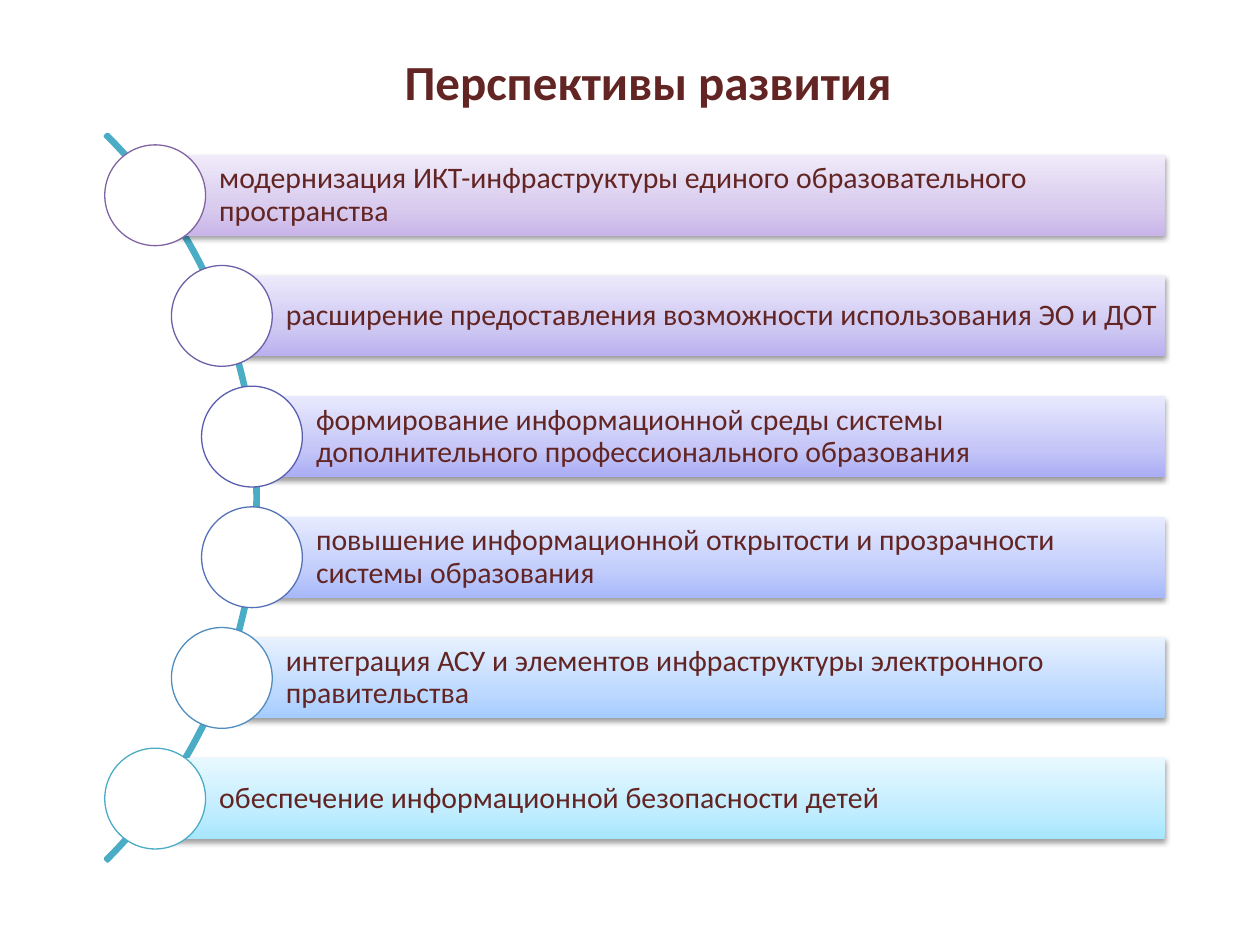
import copy

import pptx
import pptx.dml.color
import pptx.enum.shapes
import pptx.enum.text
import pptx.oxml
import pptx.oxml.ns
import pptx.util

Pt = pptx.util.Pt
RGBColor = pptx.dml.color.RGBColor
MSO_SHAPE = pptx.enum.shapes.MSO_SHAPE
ANCHOR = pptx.enum.text.MSO_ANCHOR
qn = pptx.oxml.ns.qn

MAROON = RGBColor(0x63, 0x25, 0x23)
TEAL = RGBColor(0x4B, 0xAC, 0xC6)
WHITE = RGBColor(0xFF, 0xFF, 0xFF)
# Each step: left edge, circle outline, bar colours from bottom to top, text
STEPS = [
    (88.7, RGBColor(0x80, 0x64, 0xA2),
     (RGBColor(0xC9, 0xB5, 0xE8), RGBColor(0xD8, 0xCB, 0xEE), RGBColor(0xF0, 0xEA, 0xF9)),
     "модернизация ИКТ-инфраструктуры единого образовательного пространства"),
    (126.8, RGBColor(0x6E, 0x5F, 0xA9),
     (RGBColor(0xBA, 0xB0, 0xEF), RGBColor(0xCE, 0xC8, 0xF2), RGBColor(0xEC, 0xE9, 0xFB)),
     "расширение предоставления возможности использования ЭО и ДОТ"),
    (144, RGBColor(0x5A, 0x5E, 0xB1),
     (RGBColor(0xAB, 0xAD, 0xF5), RGBColor(0xC5, 0xC6, 0xF7), RGBColor(0xE8, 0xE8, 0xFD)),
     "формирование информационной среды системы дополнительного профессионального образования"),
    (144, RGBColor(0x55, 0x72, 0xB8),
     (RGBColor(0xA7, 0xB9, 0xFB), RGBColor(0xC2, 0xCD, 0xFB), RGBColor(0xE6, 0xEB, 0xFF)),
     "повышение информационной открытости и прозрачности системы образования"),
    (126.8, RGBColor(0x50, 0x8C, 0xBF),
     (RGBColor(0xA5, 0xCC, 0xFF), RGBColor(0xBF, 0xDA, 0xFF), RGBColor(0xE7, 0xF1, 0xFF)),
     "интеграция АСУ и элементов инфраструктуры электронного правительства"),
    (88.7, TEAL,
     (RGBColor(0xA7, 0xE6, 0xFF), RGBColor(0xC1, 0xED, 0xFF), RGBColor(0xE7, 0xF8, 0xFF)),
     "обеспечение информационной безопасности детей"),
]
BAR_TOP, BAR_RIGHT, BAR_HEIGHT, PITCH, CIRCLE = 88.6, 665.6, 46, 68.95, 57.6
SHADOW = (
    '<a:outerShdw xmlns:a="http://schemas.openxmlformats.org/drawingml/2006/main" '
    'blurRad="40000" dist="20000" dir="5400000" rotWithShape="0">'
    '<a:srgbClr val="000000"><a:alpha val="38000"/></a:srgbClr></a:outerShdw>'
)


def write(shape, text, size, bold=False, anchor=ANCHOR.TOP, margins=(7.2, 3.6, 7.2, 3.6), spacing=1.0):
    frame = shape.text_frame
    frame.word_wrap = True
    frame.vertical_anchor = anchor
    (frame.margin_left, frame.margin_top,
     frame.margin_right, frame.margin_bottom) = map(Pt, margins)
    paragraph = frame.paragraphs[0]
    paragraph.alignment = pptx.enum.text.PP_ALIGN.LEFT
    paragraph.line_spacing = spacing
    run = paragraph.add_run()
    run.text = text
    run.font.name = "Calibri"
    run.font.size = Pt(size)
    run.font.bold = bold
    run.font.color.rgb = MAROON


def add_shape(kind, left, top, width, height):
    shape = slide.shapes.add_shape(kind, Pt(left), Pt(top), Pt(width), Pt(height))
    shape.shadow.inherit = False
    return shape


deck = pptx.Presentation()
deck.slide_width, deck.slide_height = Pt(720), Pt(540)
slide = deck.slides.add_slide(deck.slide_layouts[5])

# Title
title = slide.shapes.title
title.left, title.top, title.width, title.height = Pt(224), Pt(26), Pt(341), Pt(41)
write(title, "Перспективы развития", size=28, bold=True)

# Arc joining the steps
arc = add_shape(MSO_SHAPE.BLOCK_ARC, -440, -9.4, 587.5, 587.5)
for index, value in enumerate((189, 27, 0.003)):
    arc.adjustments[index] = value
arc.fill.background()
arc.line.color.rgb = TEAL
arc.line.width = Pt(2)

# Steps: a bar with its text, and a circle centred on the left edge
for row, (left, outline, shades, text) in enumerate(STEPS):
    top = BAR_TOP + row * PITCH
    bar = add_shape(MSO_SHAPE.RECTANGLE, left, top, BAR_RIGHT - left, BAR_HEIGHT)
    bar.line.fill.background()
    bar.fill.gradient()
    bar.fill.gradient_angle = 90
    stop_list = bar.element.spPr.find(qn("a:gradFill")).find(qn("a:gsLst"))
    stop_list.append(copy.deepcopy(stop_list[-1]))
    for stop, position, shade in zip(bar.fill.gradient_stops, (0, 0.35, 1), shades):
        stop.position = position
        stop.color.rgb = shade
    bar.element.spPr.find(qn("a:effectLst")).append(pptx.oxml.parse_xml(SHADOW))
    write(bar, text, size=17, anchor=ANCHOR.MIDDLE, margins=(36.6, 3.4, 3.4, 3.4), spacing=0.9)

    circle = add_shape(MSO_SHAPE.OVAL, left - CIRCLE / 2,
                       top + (BAR_HEIGHT - CIRCLE) / 2, CIRCLE, CIRCLE)
    circle.fill.solid()
    circle.fill.fore_color.rgb = WHITE
    circle.line.color.rgb = outline
    circle.line.width = Pt(0.75)

deck.save("out.pptx")
